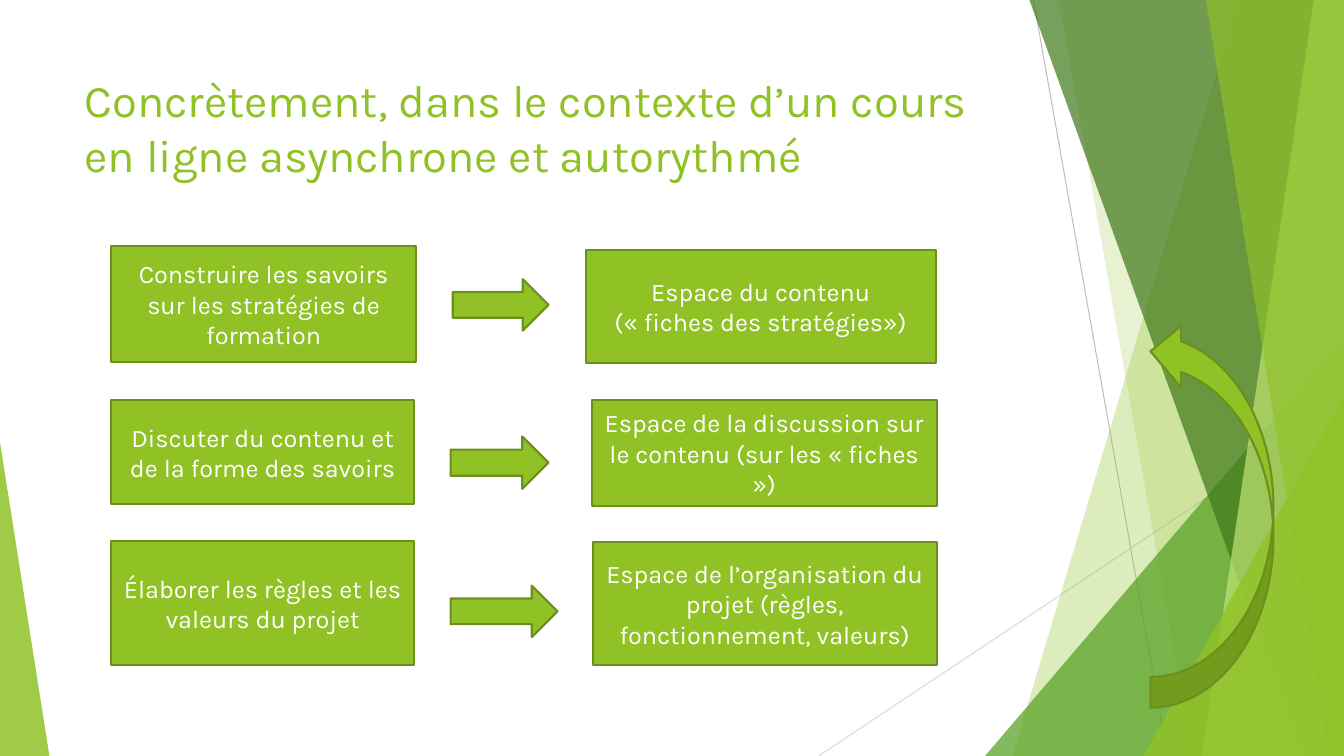
from lxml import etree
from pptx import Presentation
from pptx.dml.color import RGBColor
from pptx.enum.shapes import MSO_CONNECTOR, MSO_SHAPE
from pptx.enum.text import MSO_ANCHOR, MSO_AUTO_SIZE, PP_ALIGN
from pptx.oxml.ns import qn
from pptx.util import Pt

PX = 9144  # 100 px to the inch
W, H = 1333, 750
GREEN, DARK_GREEN, FONT = "90C226", "6B901C", "Karla"


def paint(sp, fill, opacity=100, line=None):
    sp.shadow.inherit = False
    sp.fill.solid()
    sp.fill.fore_color.rgb = RGBColor.from_string(fill)
    if opacity < 100:
        color = sp.fill._xPr.find(qn("a:solidFill"))[0]
        etree.SubElement(color, qn("a:alpha"), val=str(opacity * 1000))
    if line:
        sp.line.color.rgb = RGBColor.from_string(line)
        sp.line.width = Pt(1.5)
    else:
        sp.line.fill.background()


def write(tf, text, size, color, align):
    tf.text = text
    tf.word_wrap = True
    tf.auto_size = MSO_AUTO_SIZE.NONE
    for p in tf.paragraphs:
        p.alignment = align
        for r in p.runs:
            r.font.name = FONT
            r.font.size = Pt(size)
            r.font.color.rgb = RGBColor.from_string(color)


prs = Presentation()
prs.slide_width, prs.slide_height = W * PX, H * PX
s = prs.slides.add_slide(prs.slide_layouts[5])

# Facet decoration
for x1, y1, x2, y2, color in [
    (1025, 0, 1158, H, "BFBFBF"),
    (W, 403, 812, H, "D9D9D9"),
]:
    line = s.shapes.add_connector(
        MSO_CONNECTOR.STRAIGHT, x1 * PX, y1 * PX, x2 * PX, y2 * PX)
    line.line.color.rgb = RGBColor.from_string(color)
    line.line.width = Pt(0.75)
    etree.SubElement(line._element.spPr, qn("a:effectLst"))

# Each band runs from its top and bottom x to the right edge;
# each triangle has its peak over one end of its base.
bands_and_triangles = [
    ("band", 1228, 1004, GREEN, 30),
    ("band", 1050, 1183, GREEN, 20),
    ("triangle", 977, 333, 356, 1, "54A021", 72),
    ("band", 1021, 1291, "3F7819", 70),
    ("band", 1303, 1192, "C0E474", 70),
    ("band", 1196, 1318, GREEN, 65),
    ("triangle", 1134, 393, 199, 1, GREEN, 80),
    ("triangle", 0, 439, 49, 0, GREEN, 85),
]
for kind, *spec_values, color, opacity in bands_and_triangles:
    if kind == "band":
        top_x, bottom_x = spec_values
        outline = s.shapes.build_freeform(top_x, 0, scale=PX)
        outline.add_line_segments([(W, 0), (W, H), (bottom_x, H)], close=True)
        sp = outline.convert_to_shape()
    else:
        x, y, width, peak = spec_values
        sp = s.shapes.add_shape(MSO_SHAPE.ISOSCELES_TRIANGLE,
                                x * PX, y * PX, width * PX, (H - y) * PX)
        sp.adjustments[0] = peak
    paint(sp, color, opacity)

# Title
title = s.shapes.title
title.left, title.top, title.width, title.height = (
    v * PX for v in (74, 67, 940, 144))
write(title.text_frame,
      "Concrètement, dans le contexte d’un cours en ligne asynchrone et autorythmé",
      32.4, GREEN, PP_ALIGN.LEFT)
title.text_frame.vertical_anchor = MSO_ANCHOR.TOP

# Goals on the left, matching spaces on the right
boxes = [
    (581, 248, 347, 112, "Espace du contenu\n(« fiches des stratégies»)"),
    (587, 397, 342, 105,
     "Espace de la discussion sur le contenu (sur les « fiches »)"),
    (588, 538, 341, 122,
     "Espace de l’organisation du projet (règles, fonctionnement, valeurs)"),
    (110, 244, 303, 115, "Construire les savoirs sur les stratégies de formation"),
    (110, 397, 301, 103, "Discuter du contenu et de la forme des savoirs"),
    (110, 537, 301, 123, "Élaborer les règles et les valeurs du projet"),
]
for x, y, w, h, text in boxes:
    sp = s.shapes.add_shape(MSO_SHAPE.RECTANGLE, x * PX, y * PX, w * PX, h * PX)
    paint(sp, GREEN, line=DARK_GREEN)
    write(sp.text_frame, text, 18, "FFFFFF", PP_ALIGN.CENTER)
    sp.text_frame.vertical_anchor = MSO_ANCHOR.MIDDLE

# Arrows between the columns, and the curved one going back up
arrows = [
    (MSO_SHAPE.CURVED_RIGHT_ARROW, 1141, 318, 122, 384, 180),
    (MSO_SHAPE.RIGHT_ARROW, 449, 277, 95, 51, 0),
    (MSO_SHAPE.RIGHT_ARROW, 447, 433, 97, 52, 0),
    (MSO_SHAPE.RIGHT_ARROW, 447, 581, 106, 51, 0),
]
for shape_type, x, y, w, h, angle in arrows:
    sp = s.shapes.add_shape(shape_type, x * PX, y * PX, w * PX, h * PX)
    sp.rotation = angle
    paint(sp, GREEN, line=DARK_GREEN)

prs.save("out.pptx")
